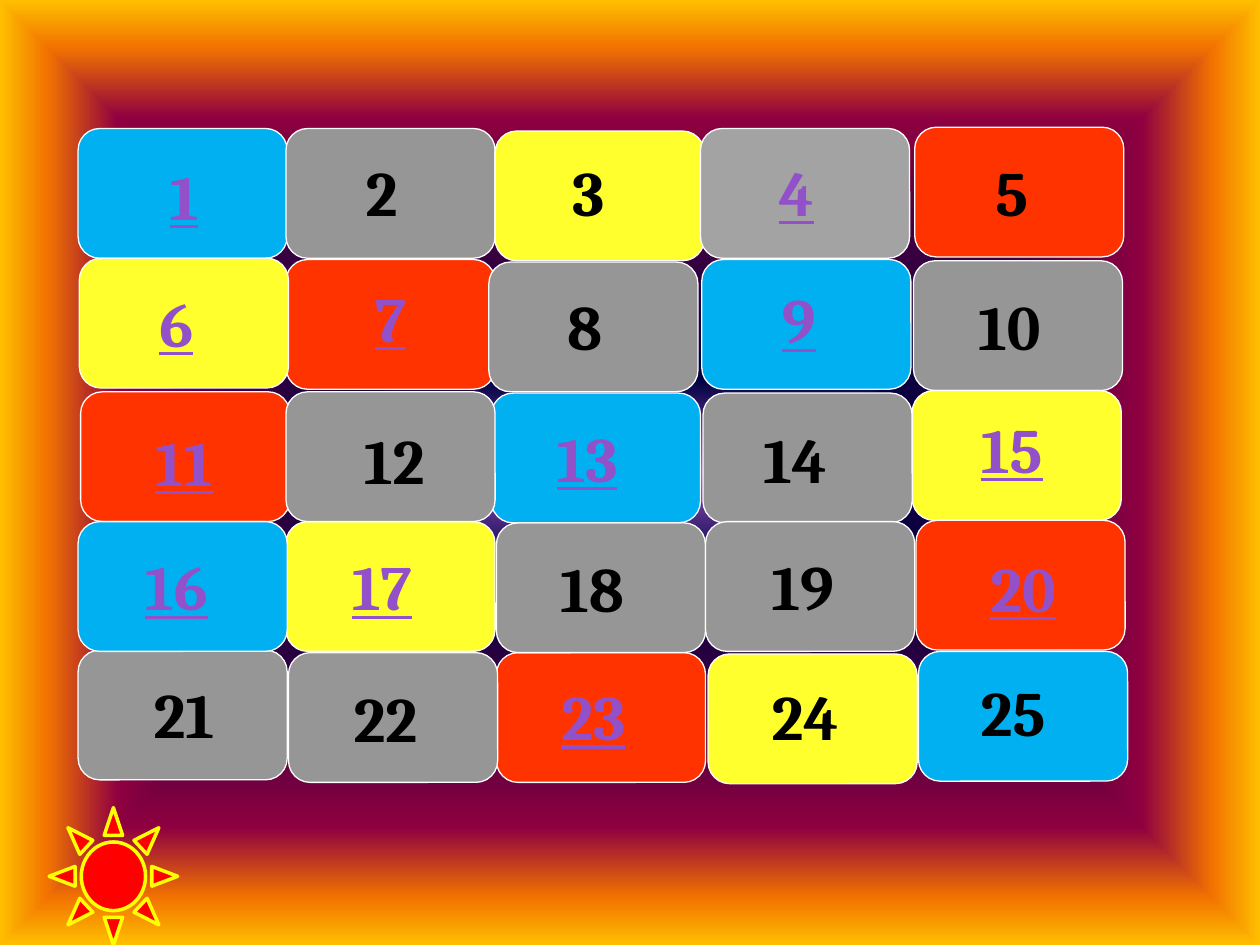
from dataclasses import dataclass

from pptx import Presentation
from pptx.dml.color import RGBColor as RGB
from pptx.enum.shapes import MSO_SHAPE as Shape
from pptx.enum.text import MSO_ANCHOR as Anchor, PP_ALIGN as Align
from pptx.oxml import parse_xml
from pptx.oxml.ns import nsdecls
from pptx.util import Inches, Pt


@dataclass(frozen=True)
class Theme:
    """Colours and type of the board."""
    blue: str = "00B0F0"
    gray: str = "969696"
    silver: str = "A3A3A3"
    yellow: str = "FFFF2D"
    red: str = "FF3300"
    white: str = "FFFFFF"
    black: str = "000000"
    purple: str = "9351C9"
    sun: str = "FF0000"
    ray: str = "FFFF00"
    font: str = "Cambria"
    size: int = 36
    glow: tuple = ((0, "9552BE"), (20, "000040"), (50, "400040"),
                   (75, "8F0040"), (90, "F27300"), (100, "FFBF00"))


THEME = Theme()
COLS = 5
STEP_X, STEP_Y = 1.66, 1.04
TILE_W, TILE_H = 1.66, 1.03
TEXT_W, TEXT_H = 0.74, 0.63

# Back to front: number, colour, underlined, tile nudge and label offset in the cell
TILES = (
    (1, "blue", True, (0, 0), (0.47, 0.18)),
    (2, "gray", False, (-0.01, 0), (0.38, 0.15)),
    (9, "blue", True, (-0.03, 0), (0.37, 0.12)),
    (10, "gray", False, (-0.01, 0.01), (0.38, 0.17)),
    (11, "red", True, (0.02, 0.01), (0.47, 0.21)),
    (3, "yellow", False, (-0.01, 0.02), (0.36, 0.15)),
    (4, "silver", True, (-0.04, 0), (0.35, 0.15)),
    (5, "red", False, (0, -0.01), (0.40, 0.15)),
    (7, "red", True, (-0.01, 0), (0.45, 0.11)),
    (23, "red", True, (0, 0), (0.40, 0.15)),
    (17, "yellow", True, (-0.01, 0), (0.38, 0.16)),
    (21, "gray", False, (0, -0.02), (0.47, 0.13)),
    (15, "yellow", True, (-0.02, 0), (0.40, 0.11)),
    (18, "gray", False, (0, 0.01), (0.39, 0.17)),
    (22, "gray", False, (0.01, 0), (0.41, 0.16)),
    (16, "blue", True, (0, 0), (0.41, 0.16)),
    (6, "yellow", True, (0.01, -0.01), (0.41, 0.15)),
    (8, "gray", False, (-0.06, 0.02), (0.33, 0.17)),
    (13, "blue", True, (-0.04, 0.02), (0.35, 0.18)),
    (14, "gray", False, (-0.02, 0.02), (0.34, 0.19)),
    (19, "gray", False, (0, 0), (0.40, 0.16)),
    (20, "red", True, (0.01, -0.01), (0.49, 0.17)),
    (25, "blue", False, (0.03, -0.01), (0.41, 0.12)),
    (12, "gray", False, (-0.01, 0.01), (0.48, 0.20)),
    (24, "yellow", False, (0.02, 0.01), (0.42, 0.15)),
)


def add_glow(slide):
    """Fill the background with a gradient that spreads from the centre."""
    stops = "".join(
        f'<a:gs pos="{pos * 1000}"><a:srgbClr val="{color}"/></a:gs>'
        for pos, color in THEME.glow)
    slide.element.cSld.insert(0, parse_xml(
        f'<p:bg {nsdecls("p", "a")}><p:bgPr><a:gradFill rotWithShape="0">'
        f'<a:gsLst>{stops}</a:gsLst><a:path path="shape">'
        '<a:fillToRect l="50000" t="50000" r="50000" b="50000"/></a:path>'
        '</a:gradFill><a:effectLst/></p:bgPr></p:bg>'))


def add_form(shapes, kind, box, fill, line, width):
    """Add a filled and outlined preset shape."""
    form = shapes.add_shape(kind, *map(Inches, box))
    form.shadow.inherit = False
    form.fill.solid()
    form.fill.fore_color.rgb = RGB.from_string(fill)
    form.line.color.rgb = RGB.from_string(line)
    form.line.width = Pt(width)


def add_label(shapes, box, text, fill, marked):
    """Add a number, underlined on its own patch if marked."""
    label = shapes.add_textbox(*map(Inches, box))
    if marked:
        label.fill.solid()
        label.fill.fore_color.rgb = RGB.from_string(fill)
    frame = label.text_frame
    frame.word_wrap = False
    frame.vertical_anchor = Anchor.TOP
    frame.text = text
    para = frame.paragraphs[0]
    para.alignment = Align.CENTER
    font = para.font
    font.name, font.size, font.bold = THEME.font, Pt(THEME.size), True
    font.underline = marked
    font.color.rgb = RGB.from_string(THEME.purple if marked else THEME.black)


def add_board(slide, left, top):
    """Place the numbered tiles on a grid that starts at left and top."""
    for num, color, marked, (dx, dy), (tx, ty) in TILES:
        row, col = divmod(num - 1, COLS)
        x, y = left + col * STEP_X, top + row * STEP_Y
        fill = getattr(THEME, color)
        group = slide.shapes.add_group_shape()
        group.name = f"Tile {num}"
        add_form(group.shapes, Shape.ROUNDED_RECTANGLE,
                 (x + dx, y + dy, TILE_W, TILE_H), fill, THEME.white, 0.75)
        add_label(group.shapes, (x + tx, y + ty, TEXT_W, TEXT_H),
                  str(num), fill, marked)


def main():
    """Build the number board and save it."""
    deck = Presentation()
    deck.slide_width, deck.slide_height = Inches(10), Inches(7.5)
    slide = deck.slides.add_slide(deck.slide_layouts[6])
    add_glow(slide)
    add_board(slide, 0.62, 1.02)
    add_form(slide.shapes, Shape.SUN, (0.39, 6.41, 1.02, 1.09),
             THEME.sun, THEME.ray, 2)
    deck.save("out.pptx")


if __name__ == "__main__":
    main()
